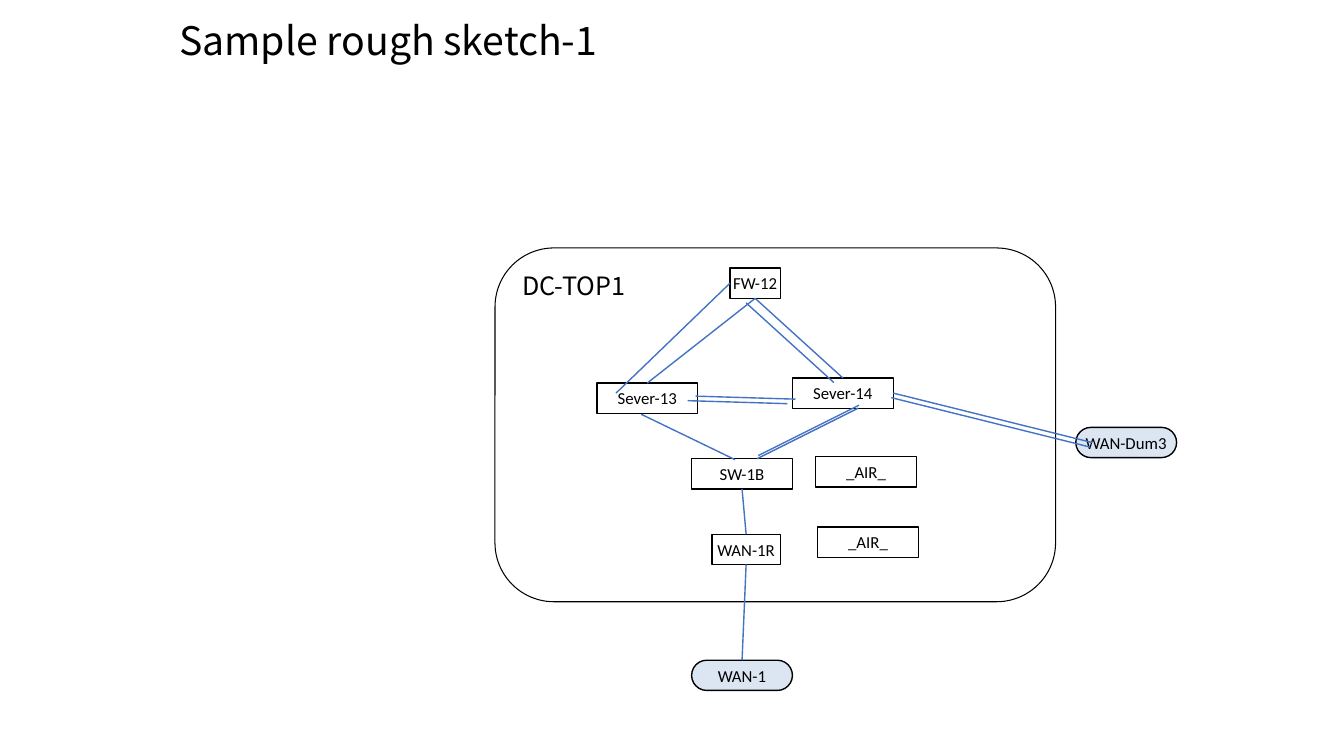
"""Build a one-slide network sketch of a data centre and its WAN links."""
from lxml import etree
from pptx import Presentation
from pptx.dml.color import RGBColor
from pptx.enum.shapes import MSO_CONNECTOR, MSO_SHAPE
from pptx.enum.text import MSO_ANCHOR, PP_ALIGN
from pptx.oxml.ns import qn
from pptx.util import Inches, Pt

ROUND_RECT = MSO_SHAPE.ROUNDED_RECTANGLE
STRAIGHT = MSO_CONNECTOR.STRAIGHT
MIDDLE, TOP = MSO_ANCHOR.MIDDLE, MSO_ANCHOR.TOP
CENTER, LEFT = PP_ALIGN.CENTER, PP_ALIGN.LEFT

CELL = Inches(0.1)
NODE_W, NODE_H = 10, 3
BLACK, LINK, CLOUD = "000000", "4472C4", "DCE6F2"
HEAD_FONT, NODE_FONT = "Noto Sans CJK JP", "Calibri"


def rgb(code):
    return RGBColor.from_string(code)


def write(sp, text, font, size, anchor, align):
    tf = sp.text_frame
    tf.word_wrap = True
    tf.vertical_anchor = anchor
    p = tf.paragraphs[0]
    p.alignment = align
    r = p.add_run()
    r.text = text
    r.font.name = font
    r.font.size = Pt(size)
    r.font.color.rgb = rgb(BLACK)
    return tf


prs = Presentation()
prs.slide_width = Inches(13.33)
prs.slide_height = Inches(7.5)
s = prs.slides.add_slide(prs.slide_layouts[6])

title = s.shapes.add_textbox(*(int(n * CELL) for n in (16.8, 0.9, 90, 6.7)))
tf = write(title, "Sample rough sketch-1", HEAD_FONT, 28, MIDDLE, LEFT)
tf.paragraphs[0].line_spacing = 0.9

site = s.shapes.add_shape(ROUND_RECT, *(int(n * CELL) for n in (49.1, 24.6, 55.6, 35.1)))
site.shadow.inherit = False
site.fill.background()
site.line.color.rgb = rgb(BLACK)
site.line.width = Pt(0.75)
write(site, "DC-TOP1", HEAD_FONT, 18, TOP, LEFT)

nodes = [
    ("WAN-1", 68.6, 65.5, NODE_W, CLOUD),
    ("Sever-13", 59.2, 38, NODE_W, None),
    ("Sever-14", 78.6, 37.5, NODE_W, None),
    ("SW-1B", 68.6, 45.5, NODE_W, None),
    ("WAN-1R", 70.6, 53, 6.8, None),
    ("FW-12", 72.4, 26.6, 5, None),
    ("WAN-Dum3", 106.7, 42.4, NODE_W, CLOUD),
    ("_AIR_", 80.9, 45.3, NODE_W, None),
    ("_AIR_", 81.1, 52.3, NODE_W, None),
]
for name, col, row, width, fill in nodes:
    sp = s.shapes.add_shape(ROUND_RECT, *(int(n * CELL) for n in (col, row, width, NODE_H)))
    sp.shadow.inherit = False
    sp.adjustments[0] = 0.5 if fill else 0
    if fill:
        sp.fill.solid()
        sp.fill.fore_color.rgb = rgb(fill)
    else:
        sp.fill.background()
    sp.line.color.rgb = rgb(BLACK)
    sp.line.width = Pt(1)
    tf = write(sp, name, NODE_FONT, 12, MIDDLE, CENTER)
    tf.margin_left = tf.margin_right = tf.margin_top = tf.margin_bottom = 0

single = [(0, 0)]
links = [
    ((74, 56), (73.6, 65.5), single),
    ((64.2, 38), (74.9, 29.6), single),
    ((61.1, 39), (72.4, 28.1), single),
    ((63.6, 41.1), (72.9, 45.6), single),
    ((73.6, 48.5), (74, 53), single),
    ((83.6, 37.5), (74.9, 29.6), single + [(-0.9, 0.45)]),
    ((88.6, 39), (108.3, 43.9), single + [(-0.2, 0.45)]),
    ((69, 39.3), (78.9, 39.6), single + [(-0.8, 0.45)]),
    ((85.2, 40.2), (75.2, 45.2), single + [(-0.1, 0.3)]),
]
for (x1, y1), (x2, y2), offsets in links:
    for dx, dy in offsets:
        ends = (x1 + dx, y1 + dy, x2 + dx, y2 + dy)
        line = s.shapes.add_connector(STRAIGHT, *(int(n * CELL) for n in ends))
        line.line.color.rgb = rgb(LINK)
        line.line.width = Pt(1)
        etree.SubElement(line._element.spPr, qn("a:effectLst"))

prs.save("out.pptx")
